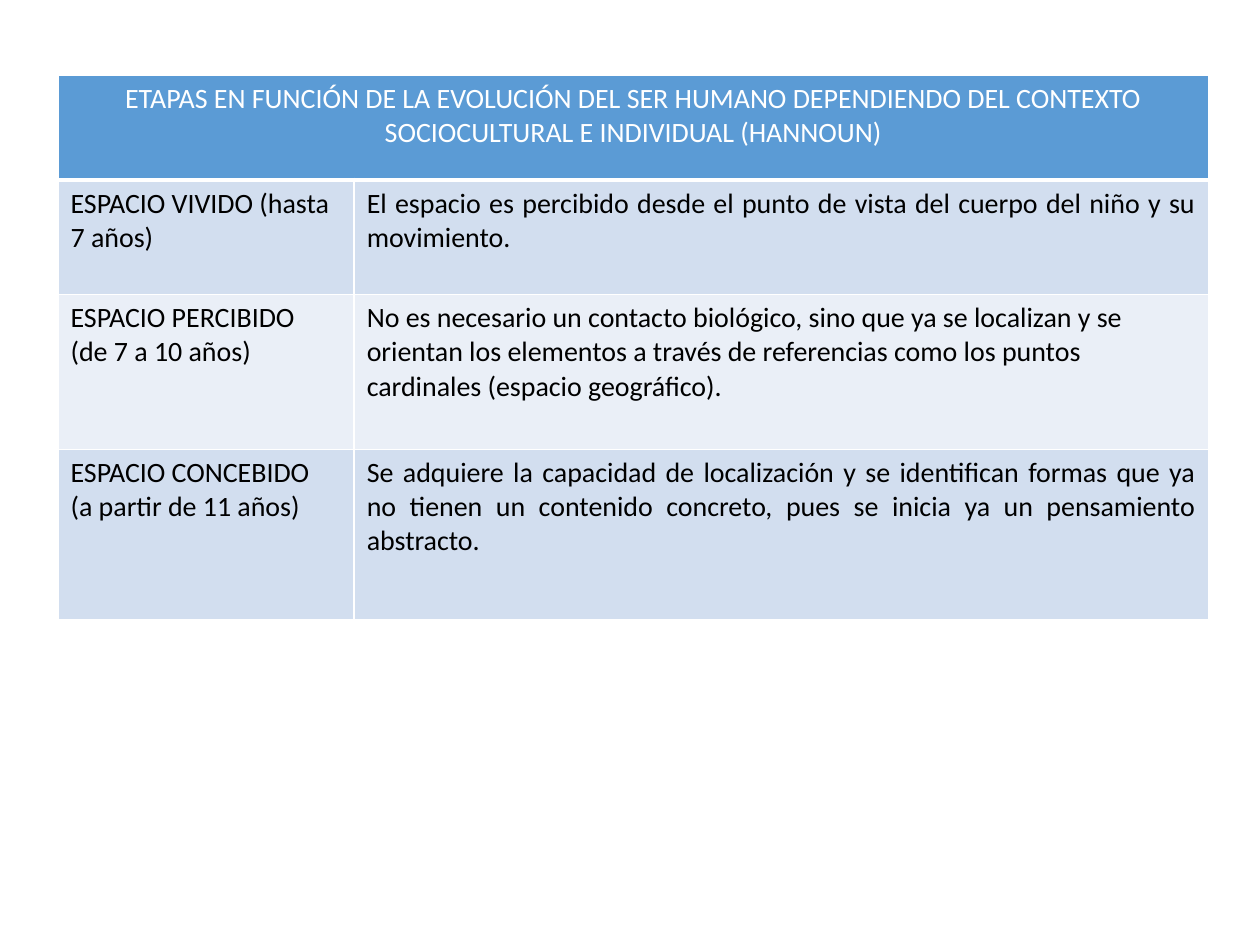
from dataclasses import dataclass

from lxml.etree import SubElement
from pptx import Presentation
from pptx.dml.color import RGBColor
from pptx.enum.text import PP_ALIGN
from pptx.oxml.ns import qn
from pptx.table import _Cell
from pptx.util import Cm, Pt

COLORS = {
    "header": "5B9BD5",
    "odd_row": "D2DEEF",
    "even_row": "EAEFF7",
    "border": "FFFFFF",
    "header_text": "FFFFFF",
    "text": "000000",
}
FONT = "Calibri"
COLUMN_WIDTHS = (5.97, 17.22)
HEADER_HEIGHT = 2.11
TITLE = (
    "ETAPAS EN FUNCIÓN DE LA EVOLUCIÓN DEL SER HUMANO DEPENDIENDO DEL CONTEXTO "
    "SOCIOCULTURAL E INDIVIDUAL (HANNOUN)"
)


@dataclass(frozen=True)
class Stage:
    name: tuple[str, ...]
    description: str
    height: float
    name_alignment: PP_ALIGN = PP_ALIGN.LEFT
    description_alignment: PP_ALIGN = PP_ALIGN.JUSTIFY


STAGES = (
    Stage(
        ("ESPACIO VIVIDO (hasta 7 años)",),
        "El espacio es percibido desde el punto de vista del cuerpo del niño y su movimiento.",
        2.31,
    ),
    Stage(
        ("ESPACIO PERCIBIDO", "(de 7 a 10 años)"),
        "No es necesario un contacto biológico, sino que ya se localizan y se orientan los "
        "elementos a través de referencias como los puntos cardinales (espacio geográfico).",
        3.12,
        description_alignment=PP_ALIGN.LEFT,
    ),
    Stage(
        ("ESPACIO CONCEBIDO", "(a partir de 11 años)"),
        "Se adquiere la capacidad de localización y se identifican formas que ya no tienen un "
        "contenido concreto, pues se inicia ya un pensamiento abstracto.",
        3.43,
        name_alignment=PP_ALIGN.JUSTIFY,
    ),
)


def add_borders(cell: _Cell, bottom_width: float) -> None:
    """Draw 1 pt lines around the cell, with its own width at the bottom."""
    properties = cell._tc.get_or_add_tcPr()
    widths = {"a:lnL": 1, "a:lnR": 1, "a:lnT": 1, "a:lnB": bottom_width}
    for tag, width in widths.items():
        line = SubElement(properties, qn(tag), w=str(Pt(width)))
        solid_fill = SubElement(line, qn("a:solidFill"))
        SubElement(solid_fill, qn("a:srgbClr"), val=COLORS["border"])


def fill_cell(
    cell: _Cell,
    lines: tuple[str, ...],
    alignment: PP_ALIGN,
    fill: str,
    text_color: str = "text",
    bottom_width: float = 1,
) -> None:
    add_borders(cell, bottom_width)
    cell.fill.solid()
    cell.fill.fore_color.rgb = RGBColor.from_string(COLORS[fill])
    text_frame = cell.text_frame
    for index, line in enumerate(lines):
        paragraph = text_frame.add_paragraph() if index else text_frame.paragraphs[0]
        paragraph.alignment = alignment
        run = paragraph.add_run()
        run.text = line
        run.font.name = FONT
        run.font.size = Pt(16)
        run.font.bold = False
        run.font.color.rgb = RGBColor.from_string(COLORS[text_color])


def main() -> None:
    presentation = Presentation()
    presentation.slide_width, presentation.slide_height = Cm(25.4), Cm(19.05)
    slide = presentation.slides.add_slide(presentation.slide_layouts[6])

    heights = [HEADER_HEIGHT] + [stage.height for stage in STAGES]
    table = slide.shapes.add_table(
        len(heights), len(COLUMN_WIDTHS),
        Cm(1.17), Cm(1.52), Cm(sum(COLUMN_WIDTHS)), Cm(sum(heights)),
    ).table
    for column, width in zip(table.columns, COLUMN_WIDTHS):
        column.width = Cm(width)
    for row, height in zip(table.rows, heights):
        row.height = Cm(height)

    header = table.cell(0, 0)
    header.merge(table.cell(0, 1))
    fill_cell(header, (TITLE,), PP_ALIGN.CENTER, "header", "header_text", bottom_width=3)
    for row_index, stage in enumerate(STAGES, start=1):
        fill = "odd_row" if row_index % 2 else "even_row"
        fill_cell(table.cell(row_index, 0), stage.name, stage.name_alignment, fill)
        fill_cell(
            table.cell(row_index, 1), (stage.description,), stage.description_alignment, fill
        )

    presentation.save("out.pptx")


if __name__ == "__main__":
    main()
